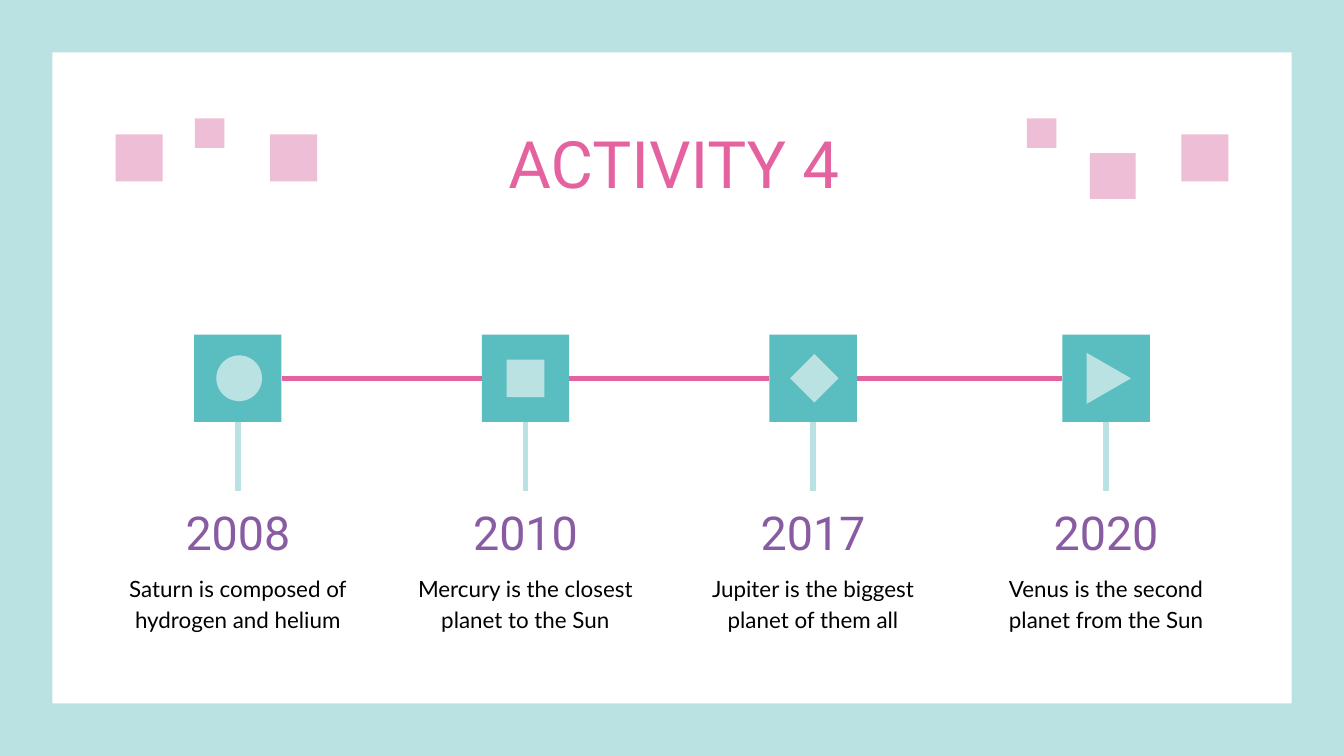
from lxml.etree import SubElement
from pptx import Presentation
from pptx.dml.color import RGBColor
from pptx.enum.shapes import MSO_CONNECTOR as Connector, MSO_SHAPE as Shape
from pptx.enum.text import MSO_ANCHOR as Anchor, PP_ALIGN as Align
from pptx.oxml.ns import qn
from pptx.util import Inches, Pt

WHITE = RGBColor(0xFF, 0xFF, 0xFF)
BLACK = RGBColor(0x00, 0x00, 0x00)
PALE_TEAL = RGBColor(0xBB, 0xE2, 0xE2)
TEAL = RGBColor(0x5A, 0xBE, 0xC0)
PINK = RGBColor(0xE5, 0x62, 0xA0)
PALE_PINK = RGBColor(0xEE, 0xBD, 0xD6)
PURPLE = RGBColor(0x88, 0x5B, 0xA2)

WIDTH = 10
HEIGHT = WIDTH * 9 / 16
BORDER = 0.39
NODE = 0.65
STEM = 0.51
YEAR_WIDTH, YEAR_HEIGHT = 1.17, 0.58

MILESTONES = [
    (1.77, "2008", "Saturn is composed of hydrogen and helium", 2.06,
     Shape.OVAL, 0.34, 0.34, 0.01, 0),
    (3.91, "2010", "Mercury is the closest planet to the Sun", 2.06,
     Shape.RECTANGLE, 0.28, 0.28, 0, 0),
    (6.05, "2017", "Jupiter is the biggest planet of them all", 2.08,
     Shape.DIAMOND, 0.36, 0.36, 0.01, 0),
    (8.23, "2020", "Venus is the second planet from the Sun", 2.11,
     Shape.ISOSCELES_TRIANGLE, 0.38, 0.33, 0.02, 90),
]


def add_block(page, kind, left, top, width, height, color):
    block = page.shapes.add_shape(
        kind, Inches(left), Inches(top), Inches(width), Inches(height))
    block.shadow.inherit = False
    block.fill.solid()
    block.fill.fore_color.rgb = color
    block.line.fill.background()
    return block


def add_text(page, text, left, top, width, height, *, font, size, color,
             spacing=1.0):
    box = page.shapes.add_textbox(
        Inches(left), Inches(top), Inches(width), Inches(height))
    frame = box.text_frame
    frame.word_wrap = True
    frame.vertical_anchor = Anchor.TOP
    frame.margin_left = frame.margin_right = Inches(0.1)
    frame.margin_top = frame.margin_bottom = Inches(0.1)
    para = frame.paragraphs[0]
    para.alignment = Align.CENTER
    para.line_spacing = spacing
    span = para.add_run()
    span.text = text
    span.font.name = font
    span.font.size = Pt(size)
    span.font.color.rgb = color
    return box


def join(page, start, start_side, end, end_side, color):
    line = page.shapes.add_connector(Connector.STRAIGHT, 0, 0, 0, 0)
    line.begin_connect(start, start_side)
    line.end_connect(end, end_side)
    line.line.color.rgb = color
    line.line.width = Pt(3)
    SubElement(line._element.spPr, qn("a:effectLst"))


def add_squares(page, left, top, squares):
    for across, down, side in squares:
        add_block(page, Shape.RECTANGLE, left + across, top + down,
                  side, side, PALE_PINK)


def add_header(page, left, top, width):
    add_text(page, "ACTIVITY 4", left, top, width, 0.63,
             font="Roboto", size=35, color=PINK)
    add_squares(page, left, top + 0.06,
                [(0, 0.12, 0.35), (1.15, 0.12, 0.35), (0.59, 0, 0.22)])
    add_squares(page, left + 6.78, top + 0.06,
                [(0, 0, 0.22), (1.15, 0.12, 0.35), (0.47, 0.26, 0.34)])


def add_milestone(page, center, top, year, note, note_width,
                  icon, icon_width, icon_height, shift, turn):
    node = add_block(page, Shape.RECTANGLE, center - NODE / 2, top,
                     NODE, NODE, TEAL)
    symbol = add_block(page, icon, center + shift - icon_width / 2,
                       top + (NODE - icon_height) / 2,
                       icon_width, icon_height, PALE_TEAL)
    symbol.rotation = turn
    year_top = top + NODE + STEM
    label = add_text(page, year, center - YEAR_WIDTH / 2, year_top,
                     YEAR_WIDTH, YEAR_HEIGHT,
                     font="Roboto", size=25, color=PURPLE)
    add_text(page, note, center - note_width / 2, year_top + 0.5,
             note_width, 0.63,
             font="Lato", size=12, color=BLACK, spacing=1.15)
    join(page, node, 2, label, 0, PALE_TEAL)
    return node


def add_timeline(page, top):
    nodes = [add_milestone(page, center, top, *details)
             for center, *details in MILESTONES]
    for start, end in zip(nodes, nodes[1:]):
        join(page, start, 3, end, 1, PINK)


def main():
    deck = Presentation()
    deck.slide_width, deck.slide_height = Inches(WIDTH), Inches(HEIGHT)
    page = deck.slides.add_slide(deck.slide_layouts[6])
    page.background.fill.solid()
    page.background.fill.fore_color.rgb = PALE_TEAL
    add_block(page, Shape.RECTANGLE, BORDER, BORDER,
              WIDTH - 2 * BORDER, HEIGHT - 2 * BORDER, WHITE)
    add_header(page, 0.86, 0.82, 8.31)
    add_timeline(page, 2.49)
    deck.save("out.pptx")


if __name__ == "__main__":
    main()
